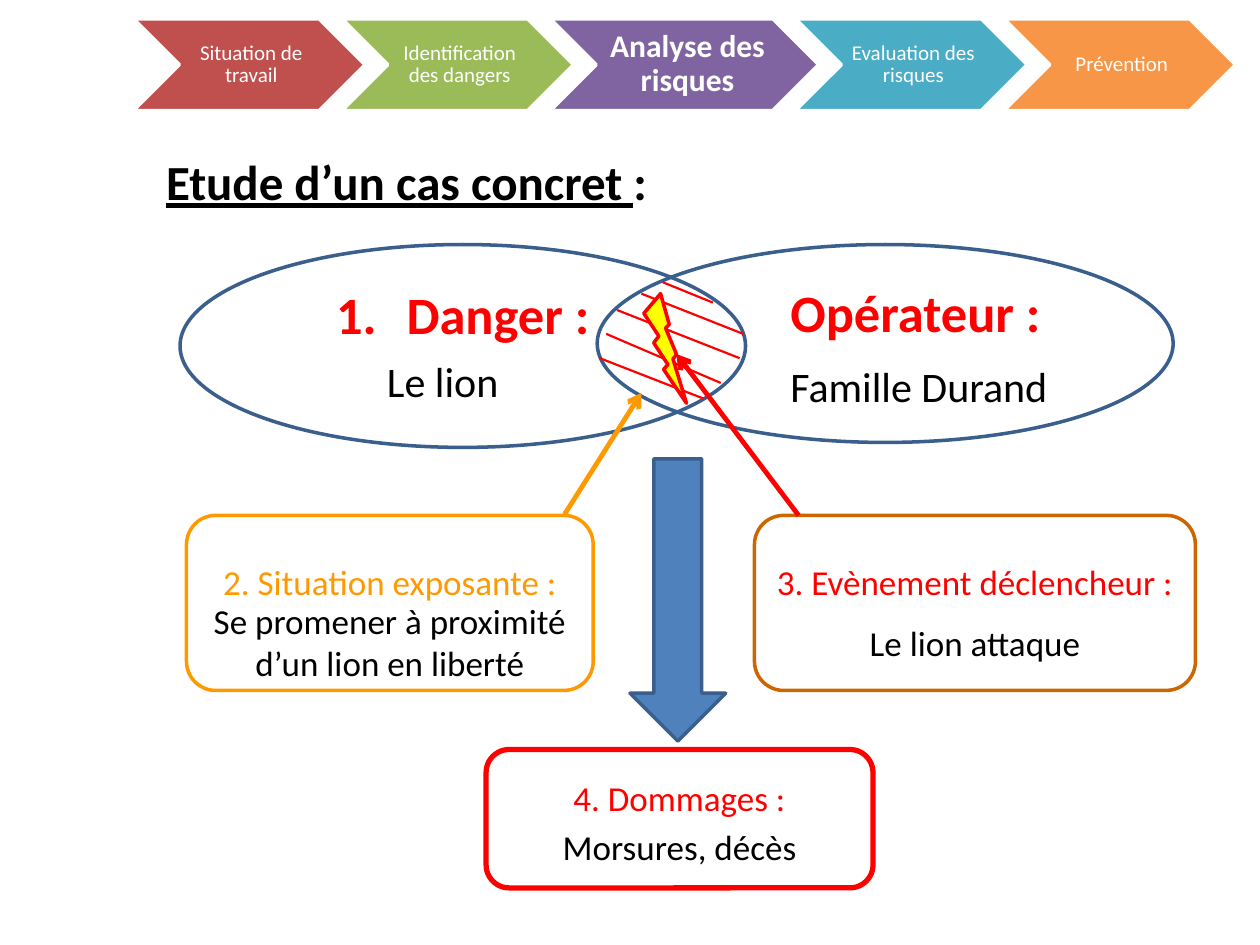
from lxml import etree
from pptx import Presentation
from pptx.dml.color import RGBColor
from pptx.enum.shapes import MSO_CONNECTOR, MSO_SHAPE
from pptx.enum.text import MSO_ANCHOR, PP_ALIGN
from pptx.oxml.ns import qn
from pptx.util import Cm, Pt

LINE = MSO_CONNECTOR.STRAIGHT
CHEVRON, OVAL, CARD = MSO_SHAPE.CHEVRON, MSO_SHAPE.OVAL, MSO_SHAPE.ROUNDED_RECTANGLE
BOLT, DOWN = MSO_SHAPE.LIGHTNING_BOLT, MSO_SHAPE.DOWN_ARROW
LEFT, CENTER = PP_ALIGN.LEFT, PP_ALIGN.CENTER
TOP, MIDDLE = MSO_ANCHOR.TOP, MSO_ANCHOR.MIDDLE


class Theme:
    font = "Calibri"
    white, black, red, yellow = "FFFFFF", "000000", "FF0000", "FFFF00"
    orange, brown, blue, navy = "FF9900", "CC6600", "4F81BD", "3A5F8C"
    steps = ["C0504D", "9BBB59", "8064A2", "4BACC6", "F79646"]
    small, step, body, label, title, head = 12, 18, 20, 24, 28, 30


def rgb(color):
    return RGBColor.from_string(color)


def add_shape(slide, kind, box, fill=None, line=None, width=2):
    shape = slide.shapes.add_shape(kind, *map(Cm, box))
    shape.shadow.inherit = False
    if fill:
        shape.fill.solid()
        shape.fill.fore_color.rgb = rgb(fill)
    else:
        shape.fill.background()
    shape.line.color.rgb = rgb(line)
    shape.line.width = Pt(width)
    return shape


def set_frame(shape, anchor, pads=(0.25, 0.13, 0.25, 0.13)):
    frame = shape.text_frame
    frame.word_wrap = True
    frame.vertical_anchor = anchor
    frame.margin_left, frame.margin_top, frame.margin_right, frame.margin_bottom = map(Cm, pads)
    return frame.paragraphs[0]


def add_run(para, text, size, color, bold=False, under=False):
    run = para.add_run()
    run.text = text
    font = run.font
    font.name, font.size = Theme.font, Pt(size)
    font.bold, font.underline = bold, under
    font.color.rgb = rgb(color)


def add_text(slide, box, runs, align=CENTER):
    para = set_frame(slide.shapes.add_textbox(*map(Cm, box)), TOP)
    para.alignment = align
    for run in runs:
        add_run(para, *run)


def add_line(slide, start, end, color, width, arrow=False):
    link = slide.shapes.add_connector(LINE, *map(Cm, start + end))
    link.line.color.rgb = rgb(color)
    link.line.width = Pt(width)
    if arrow:
        etree.SubElement(link.line._get_or_add_ln(), qn("a:tailEnd"), type="arrow")
    etree.SubElement(link._element.spPr, qn("a:effectLst"))


def draw_steps(slide, box, names, active):
    left, top, wide, high = box
    lap, extra = 0.47, 0.74
    base = (wide - extra + lap * (len(names) - 1)) / len(names)
    for i, (name, color) in enumerate(zip(names, Theme.steps)):
        on = i == active
        width = base + extra if on else base
        shape = add_shape(slide, CHEVRON, (left, top, width, high), color, Theme.white)
        pads = (0.2, 0.08, 0.08, 0.08) if on else (0.13, 0.05, 0.05, 0.05)
        para = set_frame(shape, MIDDLE, pads)
        para.alignment = CENTER
        para.line_spacing = 0.9
        add_run(para, name, Theme.step if on else Theme.small, Theme.white, on)
        left += width - lap


def draw_oval(slide, box, text, indent, number=False):
    shape = add_shape(slide, OVAL, box, line=Theme.navy)
    para = set_frame(shape, MIDDLE, (0.25, 0.13, 0.25, 1.42))
    para.alignment = CENTER
    props = para._p.get_or_add_pPr()
    props.set("marL", str(Cm(indent)))
    props.set("indent", str(-Cm(indent) if number else 0))
    if number:
        etree.SubElement(props, qn("a:buFont"), typeface="+mj-lt")
        etree.SubElement(props, qn("a:buAutoNum"), type="arabicPeriod")
    add_run(para, text, Theme.head, Theme.red, True)


def draw_overlap(slide, box):
    left, top, wide, high = box
    draw_oval(slide, (left + 8.41, top, wide - 8.41, high - 0.1), "Opérateur :", 1.22)
    draw_oval(slide, (left, top, 11.4, high), "Danger :", 1.42, True)
    hatch = [
        (9.3, 0.99, 11.35, 1.8),
        (8.81, 1.32, 11.28, 2.29),
        (8.59, 1.8, 10.9, 2.79),
        (8.46, 2.29, 10.54, 3.1),
        (9.73, 0.76, 10.74, 1.17),
    ]
    for x1, y1, x2, y2 in hatch:
        add_line(slide, (left + x1, top + y1), (left + x2, top + y2), Theme.red, 1.25)
    add_shape(slide, BOLT, (left + 9.35, top + 0.99, 0.86, 2.21), Theme.yellow, Theme.red)
    for x, y, text in [(2.26, 2.11, "Le lion"), (11.86, 2.21, "Famille Durand")]:
        spot = (left + x, top + y, 6.07, 1.27)
        add_text(slide, spot, [(text, Theme.label, Theme.black)])


def draw_card(slide, box, head, note, drop, edge, ink, width=2):
    left, top, wide, high = box
    shape = add_shape(slide, CARD, box, line=edge, width=width)
    para = set_frame(shape, MIDDLE, (0.25, 0.13, 0.25, 0.99))
    para.alignment = CENTER
    add_run(para, head, Theme.body, ink)
    spot = (left, top + drop, wide, high - drop)
    add_text(slide, spot, [(note, Theme.body, Theme.black)])


def draw_title(slide, box):
    runs = [
        ("Etude d’un cas concret ", Theme.title, Theme.black, True, True),
        (":", Theme.title, Theme.black, True),
    ]
    add_text(slide, box, runs, LEFT)


def draw_links(slide, box):
    left, top, wide, high = box
    add_line(slide, (left, top + 3.23), (left + 1.55, top + 0.78), Theme.orange, 2.75, True)
    add_line(slide, (left + 4.72, top + 3.25), (left + 2.26, top), Theme.red, 2.75, True)
    add_shape(slide, DOWN, (left + 1.32, top + 2.11, 1.93, high - 2.11), Theme.blue, Theme.navy)


def main():
    deck = Presentation()
    deck.slide_width, deck.slide_height = Cm(25.4), Cm(19.05)
    slide = deck.slides.add_slide(deck.slide_layouts[6])
    names = [
        "Situation de travail",
        "Identification des dangers",
        "Analyse des risques",
        "Evaluation des risques",
        "Prévention",
    ]
    draw_steps(slide, (2.69, 0.38, 22.22, 1.85), names, 2)
    draw_title(slide, (3.1, 2.92, 21, 1.45))
    draw_overlap(slide, (3.63, 4.93, 20.02, 4.09))
    draw_card(slide, (3.76, 10.39, 8.2, 3.53), "2. Situation exposante :",
              "Se promener à proximité d’un lion en liberté", 1.57, Theme.orange, Theme.orange)
    draw_card(slide, (15.21, 10.39, 8.89, 3.53), "3. Evènement déclencheur :",
              "Le lion attaque", 2.01, Theme.brown, Theme.red)
    draw_card(slide, (9.8, 15.11, 7.8, 2.79), "4. Dommages :",
              "Morsures, décès", 1.4, Theme.red, Theme.red, 3)
    draw_links(slide, (11.38, 7.14, 4.72, 7.8))
    deck.save("out.pptx")


if __name__ == "__main__":
    main()
